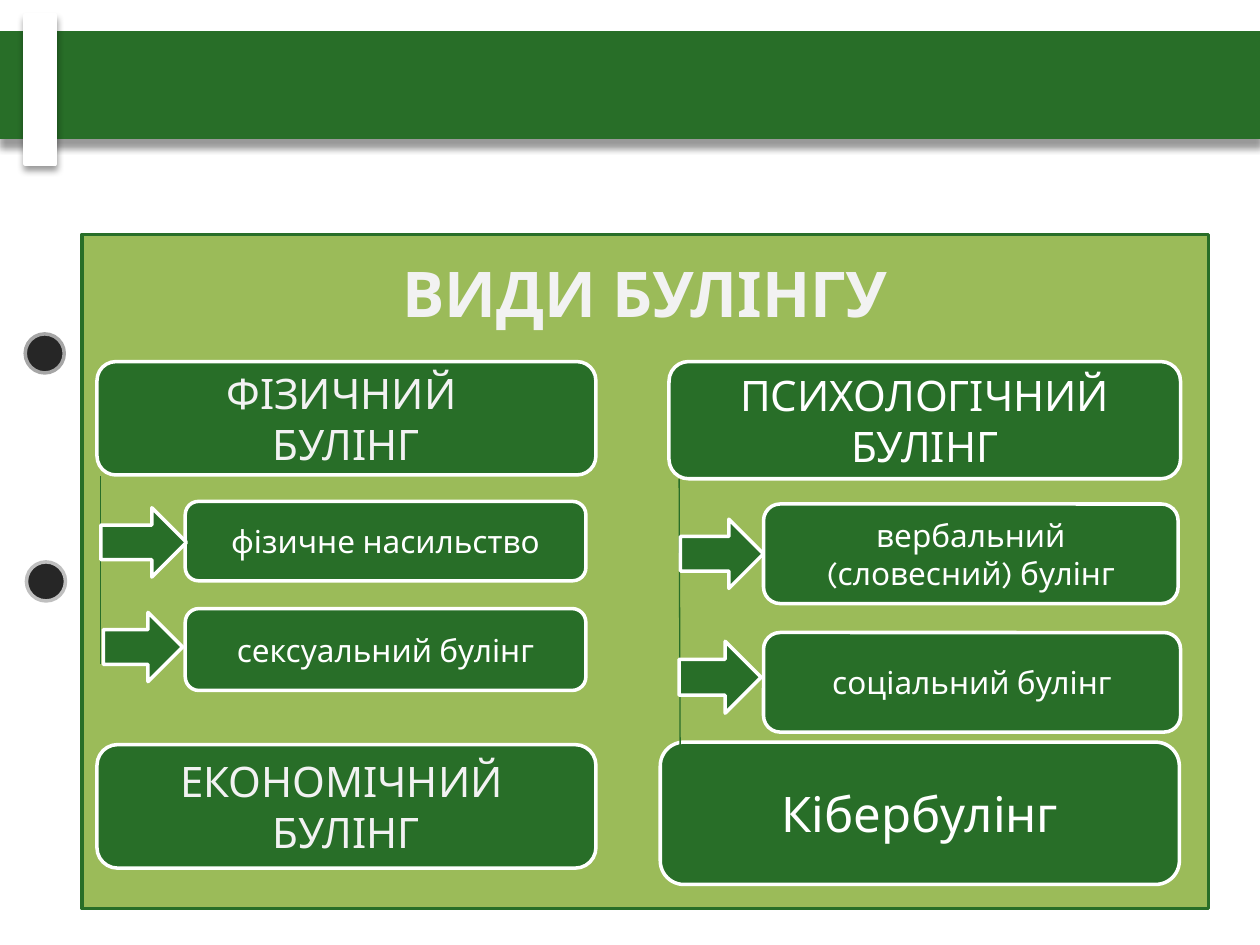
"""Build a slide about the kinds of bullying."""
from lxml import etree
from pptx import Presentation
from pptx.dml.color import RGBColor
from pptx.enum.shapes import MSO_CONNECTOR, MSO_SHAPE
from pptx.enum.text import MSO_ANCHOR, MSO_AUTO_SIZE, PP_ALIGN
from pptx.oxml.ns import qn
from pptx.util import Inches, Pt

RECTANGLE = MSO_SHAPE.RECTANGLE
ROUNDED = MSO_SHAPE.ROUNDED_RECTANGLE
OVAL = MSO_SHAPE.OVAL
ARROW = MSO_SHAPE.RIGHT_ARROW
STRAIGHT = MSO_CONNECTOR.STRAIGHT
TOP, MIDDLE = MSO_ANCHOR.TOP, MSO_ANCHOR.MIDDLE
CENTER = PP_ALIGN.CENTER
NO_FIT = MSO_AUTO_SIZE.NONE

FONT = "Karla"
GREEN, OLIVE, WHITE, PALE = "286E28", "9BBB59", "FFFFFF", "F2F2F2"
DARK = "262626"

TYPES = [
    ("ФІЗИЧНИЙ \nБУЛІНГ", (0.77, 2.87, 3.96, 0.9), 24, PALE),
    ("ПСИХОЛОГІЧНИЙ БУЛІНГ", (5.31, 2.87, 4.06, 0.93), 24, WHITE),
    ("ЕКОНОМІЧНИЙ \nБУЛІНГ", (0.77, 5.91, 3.96, 0.98), 24, PALE),
    ("Кібербулінг", (5.24, 5.89, 4.12, 1.13), 28, WHITE),
]
FORMS = [
    ("фізичне насильство", (1.47, 3.98, 3.18, 0.63)),
    ("сексуальний булінг", (1.47, 4.83, 3.18, 0.65)),
    ("вербальний (словесний) булінг", (6.06, 4, 3.29, 0.79)),
    ("соціальний булінг", (6.06, 5.02, 3.31, 0.79)),
]
STEMS = [(0.8, 3.78, 0.8, 5.27), (5.39, 3.8, 5.4, 6.46)]
ARROWS = [
    (0.8, 4.03, 0.68, 0.55),
    (0.82, 4.86, 0.63, 0.55),
    (5.4, 4.12, 0.66, 0.55),
    (5.39, 5.09, 0.65, 0.57),
]


def color(value):
    """Turn a hex string into a colour."""
    return RGBColor.from_string(value)


def paint(shape, fill, line):
    """Give a shape a solid fill and a two-point outline."""
    shape.fill.solid()
    shape.fill.fore_color.rgb = color(fill)
    shape.line.color.rgb = color(line)
    shape.line.width = Pt(2)


def add_block(page, kind, place, fill=GREEN, line=WHITE):
    """Add a preset shape without a shadow."""
    shape = page.shapes.add_shape(kind, *map(Inches, place))
    shape.shadow.inherit = False
    paint(shape, fill, line)
    return shape


def add_shadow(shape, distance):
    """Drop a soft shadow straight below a shape."""
    effects = shape._element.spPr.find(qn("a:effectLst"))
    shadow = etree.SubElement(
        effects, qn("a:outerShdw"), blurRad=str(Pt(4)),
        dist=str(Pt(distance)), dir="5400000", rotWithShape="0")
    tint = etree.SubElement(shadow, qn("a:srgbClr"), val="000000")
    etree.SubElement(tint, qn("a:alpha"), val="40000")


def write(shape, text, size, ink, bold=False, anchor=MIDDLE):
    """Write centred text into a shape."""
    frame = shape.text_frame
    frame.text = text
    frame.word_wrap = True
    frame.auto_size = NO_FIT
    frame.vertical_anchor = anchor
    for para in frame.paragraphs:
        para.alignment = CENTER
        for span in para.runs:
            span.font.name = FONT
            span.font.size = Pt(size)
            span.font.bold = bold
            span.font.color.rgb = color(ink)


def add_panel(page):
    """Turn the title placeholder into the panel under the diagram."""
    panel = page.shapes.title
    panel.left, panel.top = Inches(0.65), Inches(1.86)
    panel.width, panel.height = Inches(8.94), Inches(5.35)
    paint(panel, OLIVE, GREEN)
    write(panel, "ВИДИ БУЛІНГУ", 36, PALE, bold=True, anchor=TOP)
    panel.text_frame.margin_top = Inches(0.16)


def add_stem(page, ends):
    """Add a thin line beside a group of arrows."""
    stem = page.shapes.add_connector(STRAIGHT, *map(Inches, ends))
    stem.line.color.rgb = color(GREEN)
    stem.line.width = Pt(0.75)
    etree.SubElement(stem._element.spPr, qn("a:effectLst"))


def add_decoration(page):
    """Add the header band, its tab and the two side dots."""
    band = add_block(page, RECTANGLE, (0, 0.26, 10, 0.83), line=GREEN)
    add_shadow(band, 5)
    tab = add_block(page, RECTANGLE, (0.2, 0.12, 0.24, 1.18), WHITE)
    add_shadow(tab, 3)
    add_block(page, OVAL, (0.2, 2.65, 0.31, 0.31), DARK, "A6A6A6")
    add_block(page, OVAL, (0.21, 4.46, 0.31, 0.31), DARK, "BFBFBF")


def main():
    """Build and save the deck."""
    deck = Presentation()
    deck.slide_width, deck.slide_height = Inches(10), Inches(7.5)
    page = deck.slides.add_slide(deck.slide_layouts[5])
    add_panel(page)
    add_decoration(page)
    for text, place, size, ink in TYPES:
        write(add_block(page, ROUNDED, place), text, size, ink)
    for text, place in FORMS:
        write(add_block(page, ROUNDED, place), text, 18, WHITE)
    for ends in STEMS:
        add_stem(page, ends)
    for place in ARROWS:
        add_block(page, ARROW, place)
    deck.save("out.pptx")


if __name__ == "__main__":
    main()
